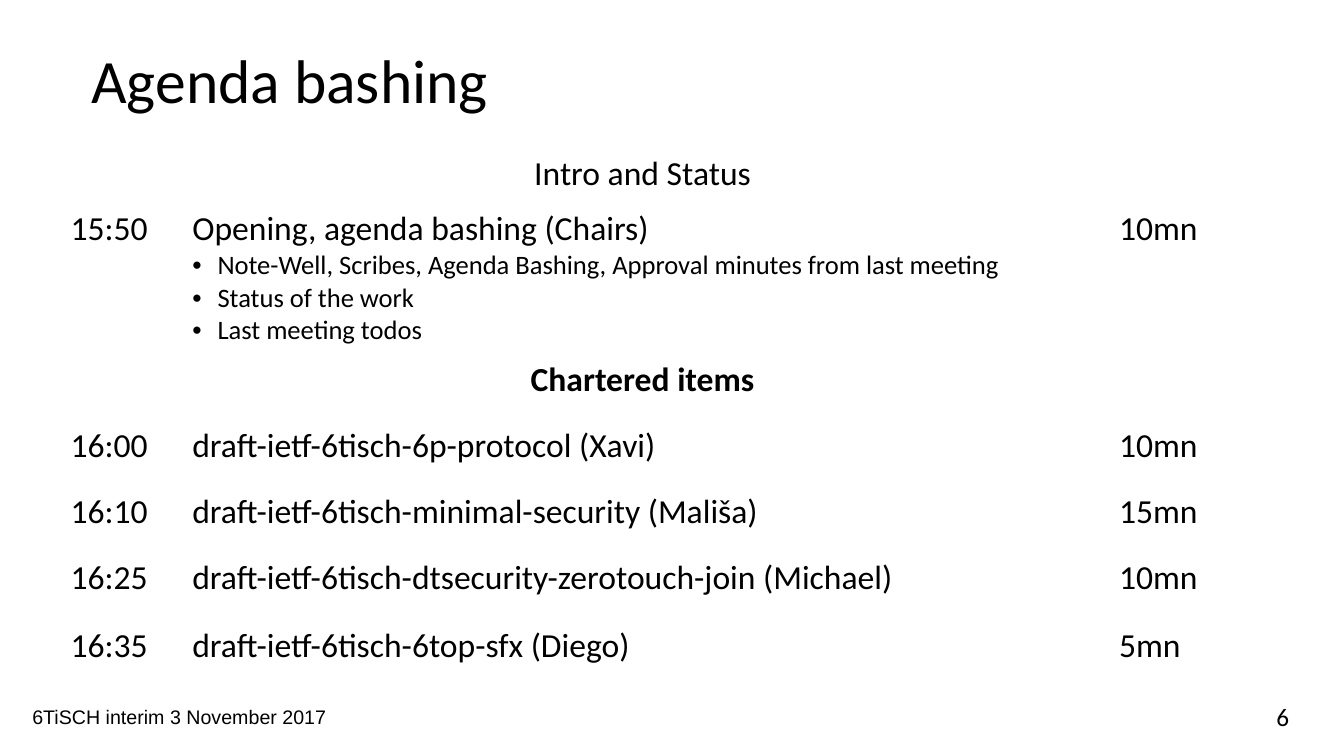
"""Build the agenda slide with its timetable."""
from lxml import etree
from pptx import Presentation
from pptx.dml.color import RGBColor
from pptx.enum.text import MSO_ANCHOR, PP_ALIGN
from pptx.oxml.ns import qn
from pptx.util import Pt

LEFT, CENTER, RIGHT = PP_ALIGN.LEFT, PP_ALIGN.CENTER, PP_ALIGN.RIGHT
MIDDLE = MSO_ANCHOR.MIDDLE
BLACK, WHITE = "000000", "FFFFFF"
TITLE_ONLY = 5

TITLE = "Agenda bashing"
AGENDA = [
    ("", ["Intro and Status"], ""),
    ("15:50", ["Opening, agenda bashing (Chairs)",
               "Note-Well, Scribes, Agenda Bashing, Approval minutes from last meeting",
               "Status of the work",
               "Last meeting todos"], "10mn"),
    ("", ["Chartered items"], ""),
    ("16:00", ["draft-ietf-6tisch-6p-protocol (Xavi)"], "10mn"),
    ("16:10", ["draft-ietf-6tisch-minimal-security (Mališa)"], "15mn"),
    ("16:25", ["draft-ietf-6tisch-dtsecurity-zerotouch-join (Michael)"], "10mn"),
    ("16:35", ["draft-ietf-6tisch-6top-sfx (Diego)"], "5mn"),
]
BOLD_HEADINGS = {"Chartered items"}
COLUMN_WIDTHS = [87, 662, 86]
ROW_HEIGHTS = [39, 108, 47, 47, 47, 49, 49]
TABLE_LEFT, TABLE_TOP = 41, 105
CELL_MARGINS = {"margin_left": 9.4, "margin_right": 9.4,
                "margin_top": 5, "margin_bottom": 5}
BULLET_INDENT = 18

TITLE_BOX = {"left": 58, "top": 8, "width": 828, "height": 104}
FOOTERS = [
    ("6TiSCH interim 3 November 2017", (16, 500, 240, 24.5), "Arial", 14, LEFT),
    ("6", (712, 497.5, 216, 29), "Calibri", 18, RIGHT),
]


def color(value):
    return RGBColor.from_string(value)


def set_lengths(target, lengths):
    for name, points in lengths.items():
        setattr(target, name, Pt(points))


def write(paragraph, text, size, alignment=LEFT, font_name="Calibri", bold=False):
    paragraph.text = text
    paragraph.alignment = alignment
    for name, value in {"name": font_name, "size": Pt(size), "bold": bold}.items():
        setattr(paragraph.font, name, value)
    paragraph.font.color.rgb = color(BLACK)


def add_bullet(paragraph):
    properties = paragraph._p.get_or_add_pPr()
    properties.set("marL", str(Pt(BULLET_INDENT)))
    properties.set("indent", str(-Pt(BULLET_INDENT)))
    etree.SubElement(properties, qn("a:buFont")).set("typeface", "Arial")
    etree.SubElement(properties, qn("a:buChar")).set("char", "•")


def fill_cell(cell, lines, heading):
    cell.fill.solid()
    cell.fill.fore_color.rgb = color(WHITE)
    set_lengths(cell, CELL_MARGINS)
    frame = cell.text_frame
    for index, line in enumerate(lines):
        paragraph = frame.add_paragraph() if index else frame.paragraphs[0]
        if index:
            add_bullet(paragraph)
        write(paragraph, line, 19 if index else 24,
              CENTER if heading else LEFT, bold=line in BOLD_HEADINGS)


def add_agenda(slide):
    table = slide.shapes.add_table(
        len(ROW_HEIGHTS), len(COLUMN_WIDTHS), Pt(TABLE_LEFT), Pt(TABLE_TOP),
        Pt(sum(COLUMN_WIDTHS)), Pt(sum(ROW_HEIGHTS))).table
    table.first_row = table.horz_banding = False
    for column, width in zip(table.columns, COLUMN_WIDTHS):
        column.width = Pt(width)
    for row, height, (start, lines, duration) in zip(table.rows, ROW_HEIGHTS, AGENDA):
        row.height = Pt(height)
        for cell, content in zip(row.cells, ([start], lines, [duration])):
            fill_cell(cell, content, heading=not start and content is lines)


def main():
    presentation = Presentation()
    presentation.slide_width, presentation.slide_height = Pt(960), Pt(540)
    slide = presentation.slides.add_slide(presentation.slide_layouts[TITLE_ONLY])
    title = slide.shapes.title
    set_lengths(title, TITLE_BOX)
    title.text_frame.vertical_anchor = MIDDLE
    write(title.text_frame.paragraphs[0], TITLE, 44)
    title.text_frame.paragraphs[0].line_spacing = 0.9
    for text, box, font_name, size, alignment in FOOTERS:
        frame = slide.shapes.add_textbox(*map(Pt, box)).text_frame
        frame.word_wrap = True
        write(frame.paragraphs[0], text, size, alignment, font_name)
    add_agenda(slide)
    presentation.save("out.pptx")


if __name__ == "__main__":
    main()
